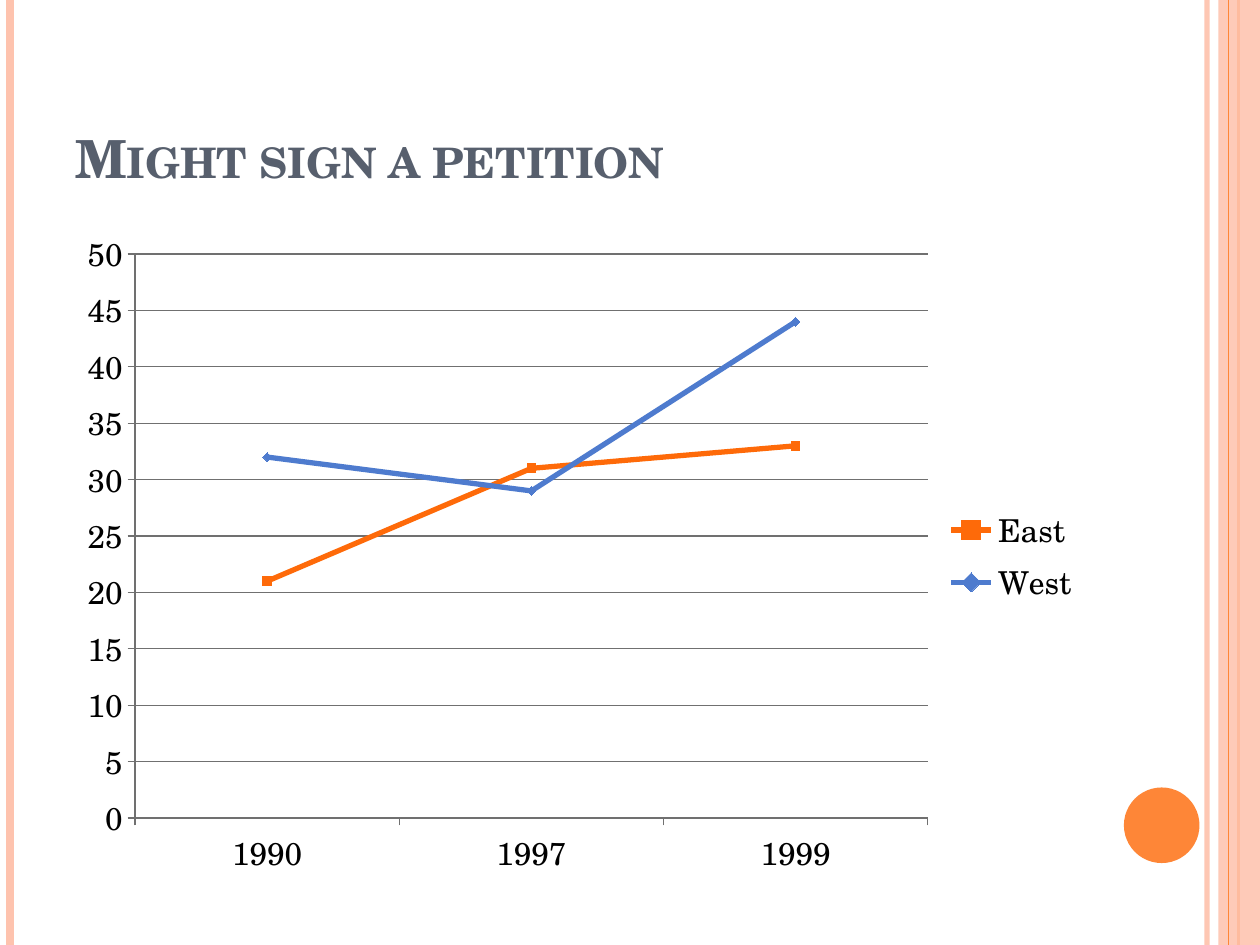
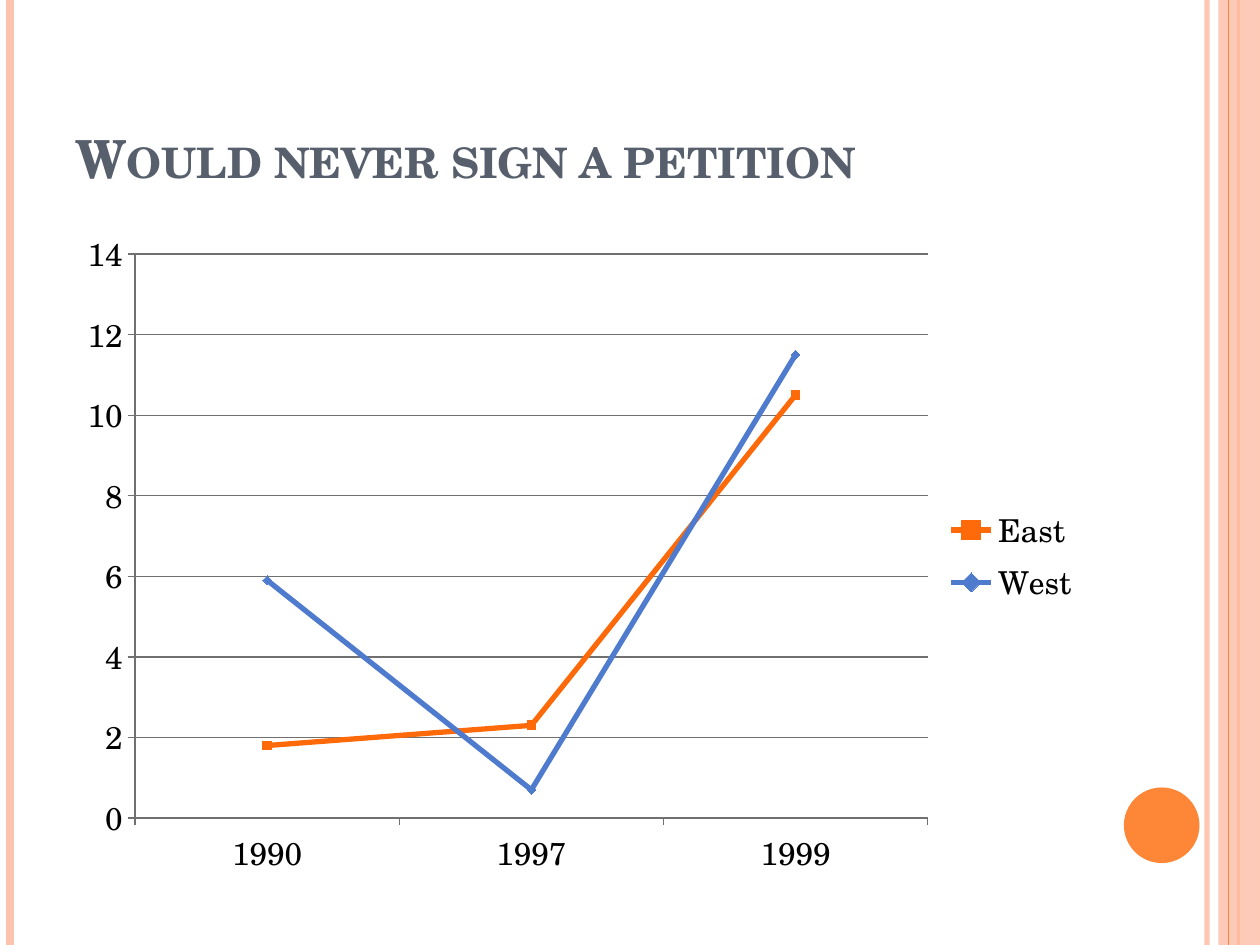
from pptx import Presentation
from pptx.chart.data import CategoryChartData
from pptx.dml.color import RGBColor
from pptx.enum.chart import XL_CHART_TYPE, XL_LEGEND_POSITION, XL_MARKER_STYLE, XL_TICK_MARK
from pptx.enum.shapes import MSO_CONNECTOR, MSO_SHAPE
from pptx.enum.text import MSO_ANCHOR
from pptx.oxml.ns import qn
from pptx.oxml.xmlchemy import OxmlElement
from pptx.util import Inches, Pt

LINE_MARKERS = XL_CHART_TYPE.LINE_MARKERS
LEGEND_RIGHT = XL_LEGEND_POSITION.RIGHT
SQUARE = XL_MARKER_STYLE.SQUARE
DIAMOND = XL_MARKER_STYLE.DIAMOND
TICK_OUTSIDE = XL_TICK_MARK.OUTSIDE
TICK_NONE = XL_TICK_MARK.NONE
STRAIGHT = MSO_CONNECTOR.STRAIGHT
RECTANGLE = MSO_SHAPE.RECTANGLE
ELLIPSE = MSO_SHAPE.OVAL
BOTTOM = MSO_ANCHOR.BOTTOM

ORANGE = RGBColor(0xFE, 0x86, 0x37)
PEACH = RGBColor(0xFE, 0xC3, 0xAE)
BLUE = RGBColor(0x75, 0x98, 0xD9)
SLATE = RGBColor(0x57, 0x5F, 0x6D)
GRAY = RGBColor(0x70, 0x70, 0x70)
BLACK = RGBColor(0x00, 0x00, 0x00)

FONT = "TeX Gyre Schola"
WIDTH, HEIGHT = 10, 7.5
SERIES_SHADE = -0.15
TITLE_FORMAT = {"name": FONT, "size": Pt(30), "bold": True}
CHART_FORMAT = {"name": FONT, "size": Pt(18), "bold": False}
PLOT_LAYOUT = {"x": 0.07, "y": 0.05, "w": 0.77, "h": 0.84}
SERIES_STYLES = {"East": (ORANGE, SQUARE), "West": (BLUE, DIAMOND)}
YEARS = ["1990", "1997", "1999"]

PETITION_SLIDES = [
    ("Might sign a petition", {"East": [21, 31, 33], "West": [32, 29, 44]}, 50, 5),
    ("Would never sign a petition",
     {"East": [1.8, 2.3, 10.5], "West": [5.9, 0.7, 11.5]}, 14, 2),
]


def apply_format(target, values):
    for name, value in values.items():
        setattr(target, name, value)


def set_opacity(shape, percent):
    for color in shape.element.spPr.iter(qn("a:srgbClr")):
        alpha = OxmlElement("a:alpha")
        alpha.set("val", str(percent * 1000))
        color.append(alpha)


class PetitionDeck:
    def __init__(self):
        self.deck = Presentation()
        self.deck.slide_width = Inches(WIDTH)
        self.deck.slide_height = Inches(HEIGHT)
        self.page = None

    def add_page(self):
        self.page = self.deck.slides.add_slide(self.deck.slide_layouts[6])
        self.add_stripe(9.58, PEACH, 3, 93)
        self.add_stripe(0.08, PEACH, 4.5)
        self.add_stripe(9.83, ORANGE, 1.5)
        self.add_filled_shape(RECTANGLE, 9.67, 0, 0.33, HEIGHT, PEACH, 87)
        self.add_stripe(9.75, ORANGE, 0.75)
        self.add_filled_shape(ELLIPSE, 8.92, 6.25, 0.6, 0.6, ORANGE)

    def add_stripe(self, left, color, width, opacity=100):
        stripe = self.page.shapes.add_connector(
            STRAIGHT, Inches(left), Inches(0), Inches(left), Inches(HEIGHT))
        stripe.line.color.rgb = color
        stripe.line.width = Pt(width)
        stripe.element.spPr.append(OxmlElement("a:effectLst"))
        if opacity < 100:
            set_opacity(stripe, opacity)

    def add_filled_shape(self, kind, left, top, width, height, color, opacity=100):
        shape = self.page.shapes.add_shape(
            kind, Inches(left), Inches(top), Inches(width), Inches(height))
        shape.shadow.inherit = False
        shape.fill.solid()
        shape.fill.fore_color.rgb = color
        shape.line.fill.background()
        if opacity < 100:
            set_opacity(shape, opacity)

    def add_title(self, text):
        box = self.page.shapes.add_textbox(
            Inches(0.5), Inches(0.3), Inches(8.17), Inches(1.25))
        apply_format(box.text_frame, {"word_wrap": True, "vertical_anchor": BOTTOM})
        span = box.text_frame.paragraphs[0].add_run()
        span.text = text
        apply_format(span.font, TITLE_FORMAT)
        span.font.color.rgb = SLATE
        for properties in box.element.iter(qn("a:rPr")):
            properties.set("cap", "small")

    def add_line_chart(self, series_values, maximum, step):
        data = CategoryChartData()
        data.categories = YEARS
        for name, values in series_values.items():
            data.add_series(name, values)
        chart = self.page.shapes.add_chart(
            LINE_MARKERS, Inches(0.5), Inches(1.75), Inches(8.17), Inches(5.33), data).chart
        apply_format(chart.font, CHART_FORMAT)
        chart.font.color.rgb = BLACK
        apply_format(chart, {"has_title": False, "has_legend": True})
        apply_format(chart.legend, {"position": LEGEND_RIGHT, "include_in_layout": False})
        chart.plots[0].vary_by_categories = False
        apply_format(chart.value_axis, {
            "minimum_scale": 0, "maximum_scale": maximum, "major_unit": step,
            "has_major_gridlines": True})
        self.style_line(chart.value_axis.major_gridlines.format.line, GRAY, 0.75)
        for axis in (chart.category_axis, chart.value_axis):
            apply_format(axis, {"major_tick_mark": TICK_OUTSIDE, "minor_tick_mark": TICK_NONE})
            self.style_line(axis.format.line, GRAY, 0.75)
        for series in chart.plots[0].series:
            self.style_series(series)
        self.place_plot(chart)

    def style_line(self, line, color, width):
        line.color.rgb = color
        line.width = Pt(width)

    def style_series(self, series):
        color, marker_style = SERIES_STYLES[series.name]
        series.smooth = False
        self.style_line(series.format.line, color, 3)
        series.format.line.color.brightness = SERIES_SHADE
        apply_format(series.marker, {"style": marker_style, "size": 5})
        fill = series.marker.format.fill
        fill.solid()
        fill.fore_color.rgb = color
        fill.fore_color.brightness = SERIES_SHADE
        series.marker.format.line.fill.background()

    def place_plot(self, chart):
        plot_area = chart.element.find(".//" + qn("c:plotArea"))
        for old_layout in plot_area.findall(qn("c:layout")):
            plot_area.remove(old_layout)
        layout = OxmlElement("c:layout")
        manual = OxmlElement("c:manualLayout")
        settings = {"layoutTarget": "inner", "xMode": "edge", "yMode": "edge", **PLOT_LAYOUT}
        for name, value in settings.items():
            setting = OxmlElement("c:" + name)
            setting.set("val", str(value))
            manual.append(setting)
        layout.append(manual)
        plot_area.insert(0, layout)


def main():
    petition = PetitionDeck()
    for title, series_values, maximum, step in PETITION_SLIDES:
        petition.add_page()
        petition.add_title(title)
        petition.add_line_chart(series_values, maximum, step)
    petition.deck.save("out.pptx")


if __name__ == "__main__":
    main()
